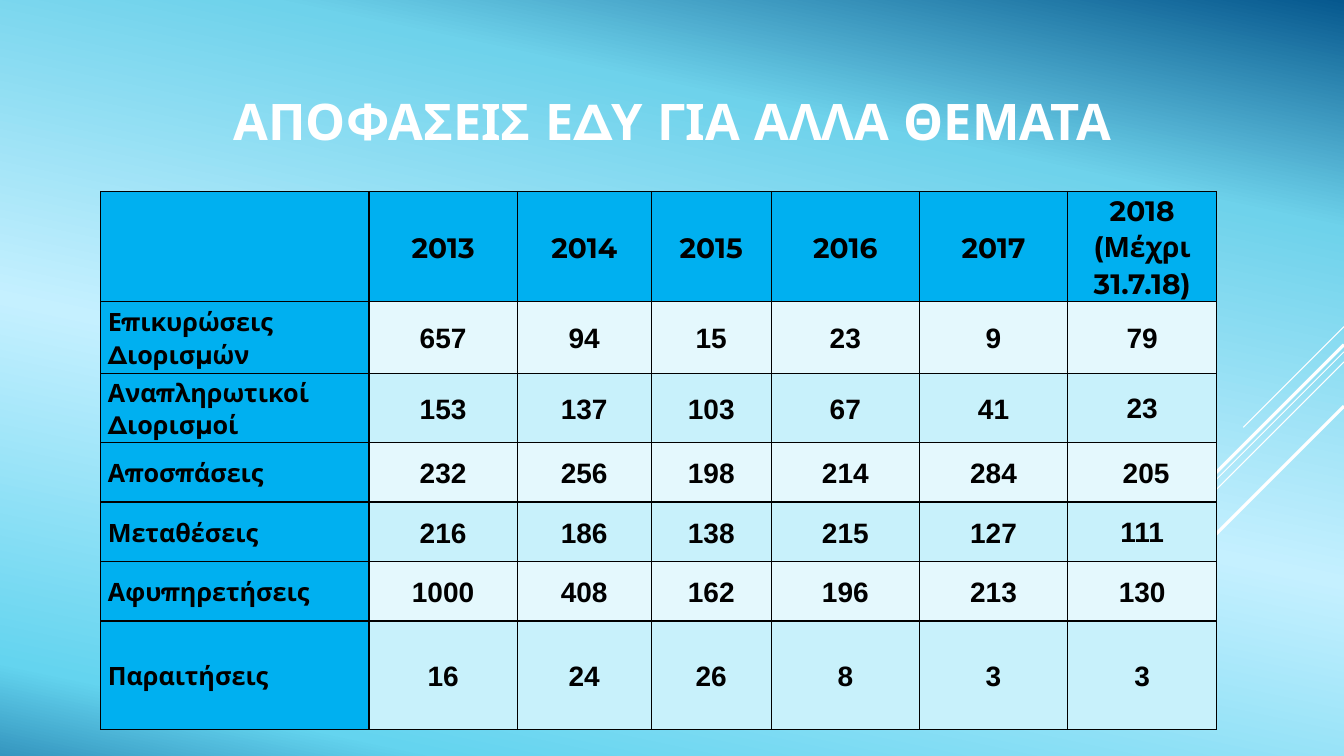
from lxml.etree import SubElement
from pptx import Presentation
from pptx.dml.color import RGBColor
from pptx.enum.shapes import MSO_CONNECTOR
from pptx.enum.text import MSO_ANCHOR, MSO_AUTO_SIZE, PP_ALIGN
from pptx.oxml.ns import qn
from pptx.util import Inches, Pt

COLS, ROWS = 1333, 750
UNIT = Inches(0.01)
BLUE, BLACK, WHITE = "00B0F0", "000000", "FFFFFF"
BANDS = ["E4F8FD", "C8F1FB"]
STOPS = [(0, "06588E"), (22, "6ED2EB"), (56, "C5F0FF"), (91, "64D4EF"), (100, "3596BF")]
RAYS = [(324, 100, 0.75), (349, 326, 0.75), (359, 207, 0.75), (342, 191, 2.25), (403, 139, 2.25)]
WIDTHS = [266, 147, 133, 119, 147, 147, 148]
HEIGHTS = [108, 71, 69, 59, 59, 59, 108]
DATA = [
    ["", "2013", "2014", "2015", "2016", "2017", "2018 (Μέχρι 31.7.18)"],
    ["Επικυρώσεις Διορισμών", "657", "94", "15", "23", "9", "79"],
    ["Αναπληρωτικοί Διορισμοί", "153", "137", "103", "67", "41", "23"],
    ["Αποσπάσεις", "232", "256", "198", "214", "284", " 205"],
    ["Μεταθέσεις", "216", "186", "138", "215", "127", "111"],
    ["Αφυπηρετήσεις", "1000", "408", "162", "196", "213", "130"],
    ["Παραιτήσεις", "16", "24", "26", "8", "3", "3"],
]


def grid(*cells):
    return [cell * UNIT for cell in cells]


def paint(color, code):
    color.rgb = RGBColor.from_string(code)


def write(frame, text, size=20, font="Montserrat", color=BLACK,
          align=PP_ALIGN.CENTER, line=None, after=None):
    para = frame.paragraphs[0]
    para.alignment = align
    para.line_spacing = line
    para.space_after = after
    run = para.add_run()
    run.text = text
    run.font.size = Pt(size)
    run.font.name = font
    run.font.bold = True
    paint(run.font.color, color)


def add_back(slide):
    fill = slide.background.fill
    fill.gradient()
    fill.gradient_angle = 258
    stops = slide.element.find(".//" + qn("a:gsLst"))
    for stop in list(stops):
        stops.remove(stop)
    for place, code in STOPS:
        stop = SubElement(stops, qn("a:gs"), pos=str(place * 1000))
        SubElement(stop, qn("a:srgbClr"), val=code)


def add_ray(slide, top, reach, weight):
    ends = grid(COLS, top, COLS - reach, top + reach)
    ray = slide.shapes.add_connector(MSO_CONNECTOR.STRAIGHT, *ends)
    paint(ray.line.color, WHITE)
    ray.line.width = Pt(weight)
    SubElement(ray.element.spPr, qn("a:effectLst"))


def add_title(slide, text):
    title = slide.shapes.title
    title.left, title.top, title.width, title.height = grid(217, 92, 900, 55)
    frame = title.text_frame
    frame.word_wrap = True
    frame.auto_size = MSO_AUTO_SIZE.NONE
    frame.vertical_anchor = MSO_ANCHOR.MIDDLE
    write(frame, text, size=36, color=WHITE)


def add_edges(cell):
    props = cell._tc.get_or_add_tcPr()
    for side in "LRTB":
        edge = SubElement(props, qn("a:ln" + side), w=str(Pt(1)))
        fill = SubElement(edge, qn("a:solidFill"))
        SubElement(fill, qn("a:srgbClr"), val=BLACK)


def fill_cell(cell, text, row, col):
    head, label = row == 0, col == 0
    add_edges(cell)
    cell.fill.solid()
    paint(cell.fill.fore_color, BLUE if head or label else BANDS[(row - 1) % 2])
    last = col == len(WIDTHS) - 1
    side, top = grid(0, 0) if last else grid(7, 1)
    cell.margin_left = cell.margin_right = side
    cell.margin_top, cell.margin_bottom = top, 0
    cell.vertical_anchor = MSO_ANCHOR.MIDDLE
    if text:
        write(cell.text_frame, text,
              size=18 if label else 20,
              font="Montserrat" if head or label else "Arial",
              align=PP_ALIGN.LEFT if label else PP_ALIGN.CENTER,
              line=1.07, after=Pt(8))


def add_grid(slide):
    box = grid(100, 190, sum(WIDTHS), sum(HEIGHTS))
    table = slide.shapes.add_table(len(HEIGHTS), len(WIDTHS), *box).table
    table.horz_banding = False
    for column, width in zip(table.columns, grid(*WIDTHS)):
        column.width = width
    for row, height in zip(table.rows, grid(*HEIGHTS)):
        row.height = height
    for row, texts in enumerate(DATA):
        for col, text in enumerate(texts):
            fill_cell(table.cell(row, col), text, row, col)


def main():
    deck = Presentation()
    deck.slide_width, deck.slide_height = grid(COLS, ROWS)
    slide = deck.slides.add_slide(deck.slide_layouts[5])
    add_back(slide)
    for ray in RAYS:
        add_ray(slide, *ray)
    add_title(slide, "ΑΠΟΦΑΣΕΙΣ ΕΔΥ ΓΙΑ ΑΛΛΑ ΘΕΜΑΤΑ")
    add_grid(slide)
    deck.save("out.pptx")


if __name__ == "__main__":
    main()
